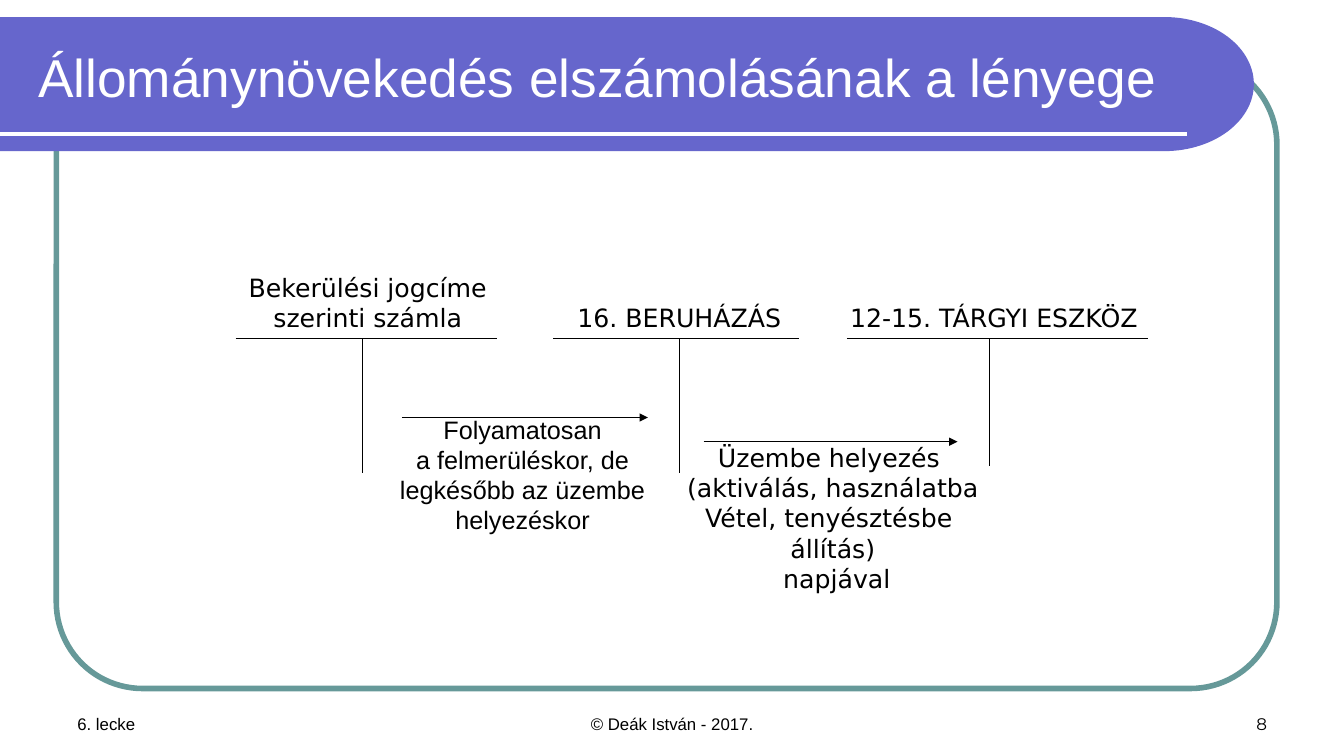
import math

from lxml import etree
from pptx import Presentation
from pptx import util as u
from pptx.dml.color import RGBColor
from pptx.enum import shapes, text
from pptx.oxml.ns import qn

COLOURS = {"banner": "6666CC", "frame": "669999", "ink": "000000", "paper": "FFFFFF"}
LEFT, CENTER, RIGHT = (text.PP_ALIGN.LEFT, text.PP_ALIGN.CENTER, text.PP_ALIGN.RIGHT)
TOP, MIDDLE, BOTTOM = (text.MSO_ANCHOR.TOP, text.MSO_ANCHOR.MIDDLE,
                       text.MSO_ANCHOR.BOTTOM)

RULE_Y = 8.53
LABEL_BOTTOM = 8.51
# label lines, label centre, bar left, bar right, stem x, stem bottom
ACCOUNTS = [
    (["Bekerülési jogcíme", "szerinti számla"], 9.27, 5.94, 12.52, 9.14, 11.91),
    (["16. BERUHÁZÁS"], 17.12, 13.94, 20.14, 17.12, 11.91),
    (["12-15. TÁRGYI ESZKÖZ"], 25.05, 21.34, 28.93, 24.94, 11.73),
]
# note lines, font, note centre, note top, arrow left, arrow right, arrow y
TRANSFERS = [
    (["Folyamatosan", "a felmerüléskor, de", "legkésőbb az üzembe", "helyezéskor"],
     "Arial", 13.17, 10.31, 10.13, 16.33, 10.52),
    (["Üzembe helyezés ", "(aktiválás, használatba", "Vétel, tenyésztésbe ",
      "állítás)", " napjával"],
     "DejaVu Sans", 20.99, 11.02, 17.73, 24.13, 11.13),
]
# text, font, alignment, left, width
FOOTERS = [
    ("6. lecke", "Arial", LEFT, 1.7, 7.9),
    ("© Deák István - 2017.", "Arial", CENTER, 11.58, 10.72),
    ("8", "Montserrat", RIGHT, 24.28, 7.9),
]


def colour(name):
    return RGBColor.from_string(COLOURS[name])


def set_all(target, values):
    for name, value in values.items():
        setattr(target, name, value)


def text_height(lines):
    """Height in cm of a box with 18 point lines and default insets."""
    return 0.25 + 0.76 * len(lines)


class SlideBuilder:
    def __init__(self, page):
        self.page = page
        self.shapes = page.shapes

    def fill_text(self, box, lines, size, font, ink="ink", align=CENTER, anchor=TOP,
                  wrap=True):
        frame = box.text_frame
        set_all(frame, {"word_wrap": wrap, "vertical_anchor": anchor,
                        "auto_size": text.MSO_AUTO_SIZE.NONE})
        for number, line in enumerate(lines):
            para = frame.add_paragraph() if number else frame.paragraphs[0]
            para.alignment = align
            span = para.add_run()
            span.text = line
            set_all(span.font, {"size": u.Pt(size), "name": font})
            span.font.color.rgb = colour(ink)

    def textbox(self, left, top, width, height, lines, size, font, **style):
        box = self.shapes.add_textbox(u.Cm(left), u.Cm(top), u.Cm(width), u.Cm(height))
        self.fill_text(box, lines, size, font, **style)

    def title(self, left, top, width, height, words):
        box = self.shapes.title
        set_all(box, {"left": u.Cm(left), "top": u.Cm(top),
                      "width": u.Cm(width), "height": u.Cm(height)})
        self.fill_text(box, [words], 38, "Arial", ink="paper", align=LEFT, anchor=MIDDLE)
        box.element.getparent().append(box.element)  # in front of the banner

    def frame(self, left, top, width, height):
        box = self.shapes.add_shape(shapes.MSO_SHAPE.ROUNDED_RECTANGLE, u.Cm(left),
                                    u.Cm(top), u.Cm(width), u.Cm(height))
        box.adjustments[0] = 0.137
        box.shadow.inherit = False
        box.fill.background()
        box.line.color.rgb = colour("frame")
        box.line.width = u.Pt(4)

    def banner(self, top, straight, radius_x, radius_y):
        """Bar from the left slide edge that ends in a half ellipse."""
        angles = [math.radians(degree) for degree in range(-90, 91, 3)]
        points = [(u.Cm(straight + radius_x * math.cos(angle)),
                   u.Cm(top + radius_y * (1 + math.sin(angle)))) for angle in angles]
        outline = self.shapes.build_freeform(0, u.Cm(top))
        outline.add_line_segments(points + [(0, u.Cm(top + 2 * radius_y))], close=True)
        box = outline.convert_to_shape()
        box.shadow.inherit = False
        box.fill.solid()
        box.fill.fore_color.rgb = colour("banner")
        box.line.fill.background()

    def line(self, x1, y1, x2, y2, ink="ink", width=0.75, arrow=False):
        line = self.shapes.add_connector(shapes.MSO_CONNECTOR.STRAIGHT, u.Cm(x1),
                                         u.Cm(y1), u.Cm(x2), u.Cm(y2))
        line.line.color.rgb = colour(ink)
        line.line.width = u.Pt(width)
        properties = line.element.spPr
        if arrow:
            etree.SubElement(properties.find(qn("a:ln")), qn("a:tailEnd"), type="triangle")
        etree.SubElement(properties, qn("a:effectLst"))


def main():
    deck = Presentation()
    set_all(deck, {"slide_width": u.Cm(33.87), "slide_height": u.Cm(19.05)})
    slide = SlideBuilder(deck.slides.add_slide(deck.slide_layouts[5]))

    slide.frame(1.42, 1.47, 30.76, 15.88)
    slide.banner(0.43, 29.34, 2.26, 1.69)
    slide.line(0, 3.38, 29.92, 3.38, ink="paper", width=3)
    slide.title(0.71, 0.64, 29.69, 2.54, "Állománynövekedés elszámolásának a lényege")

    for words, font, align, left, width in FOOTERS:
        slide.textbox(left, 17.35, width, 1.27, [words], 12, font,
                      align=align, anchor=BOTTOM)

    for lines, centre, left, right, stem, bottom in ACCOUNTS:
        height = text_height(lines)
        width = right - left
        slide.textbox(centre - width / 2, LABEL_BOTTOM - height, width, height,
                      lines, 18, "DejaVu Sans", wrap=False)
        slide.line(left, RULE_Y, right, RULE_Y)
        slide.line(stem, RULE_Y, stem, bottom)

    for lines, font, centre, top, left, right, arrow_y in TRANSFERS:
        width = right - left + 1
        slide.line(left, arrow_y, right, arrow_y, arrow=True)
        slide.textbox(centre - width / 2, top, width, text_height(lines),
                      lines, 18, font, wrap=False)

    deck.save("out.pptx")


if __name__ == "__main__":
    main()
